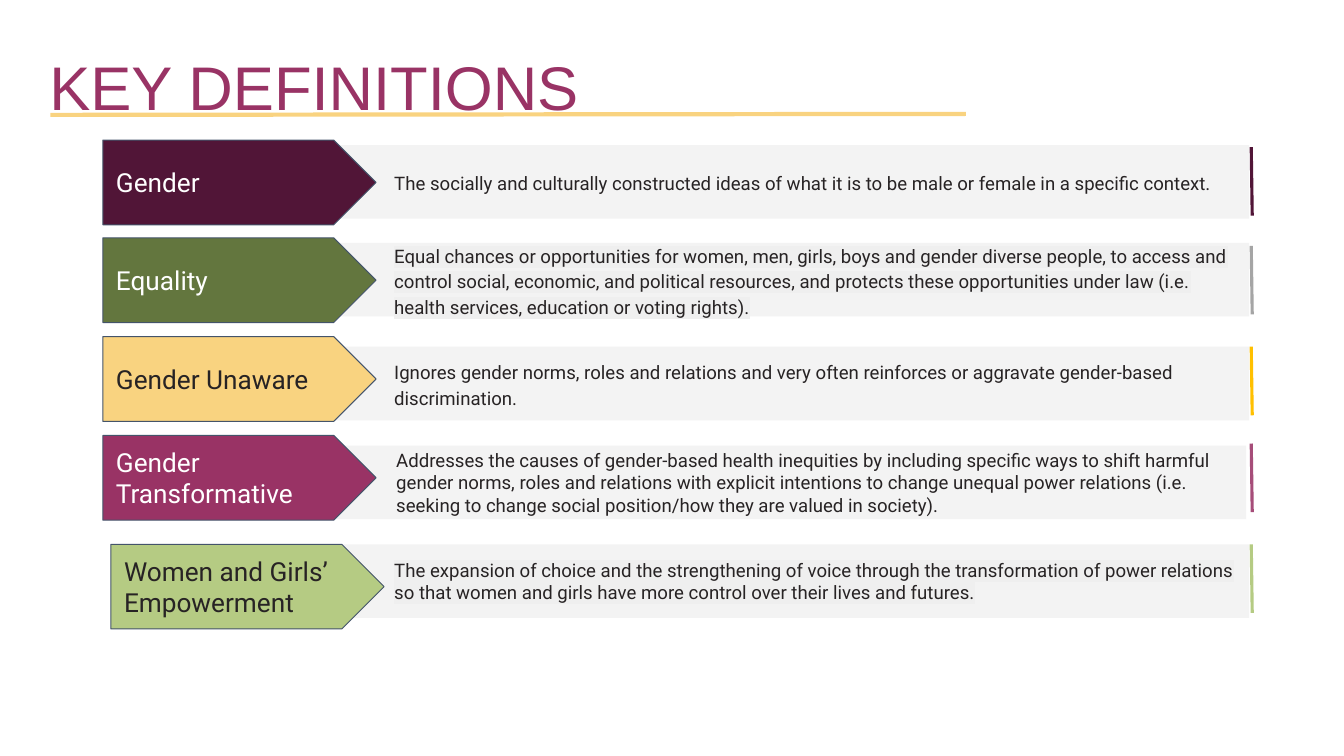
from dataclasses import dataclass

from lxml.etree import SubElement
from pptx import Presentation
from pptx.dml.color import RGBColor
from pptx.enum.shapes import MSO_CONNECTOR, MSO_SHAPE
from pptx.enum.text import MSO_ANCHOR, MSO_AUTO_SIZE, PP_ALIGN
from pptx.oxml.ns import qn
from pptx.shapes.autoshape import Shape
from pptx.slide import Slide
from pptx.text.text import TextFrame
from pptx.util import Emu, Pt

EMU_PER_PX = 9144
INSET = 13
COLORS = {
    "plum": "511537",
    "olive": "63763E",
    "sand": "F9D380",
    "magenta": "993365",
    "lime": "B5CB83",
    "gray": "A5A5A5",
    "amber": "FFC000",
    "rose": "A64D79",
    "outline": "44546A",
    "bar": "F3F3F3",
    "highlight": "EFEFEF",
    "ink": "272324",
    "white": "FFFFFF",
}


@dataclass(frozen=True)
class Definition:
    term: str
    meaning: str
    label_top: int
    bar_top: int
    stripe_top: int
    label_color: str
    stripe_color: str
    term_color: str = "white"
    label_left: int = 102
    bar_left: int = 328
    bar_width: int = 911
    line_spacing: float = 1.0
    highlighted: bool = False


DEFINITIONS = [
    Definition(
        "Gender",
        "The socially and culturally constructed ideas of what it is to be male or female "
        "in a specific context.",
        139, 144, 146, "plum", "plum", line_spacing=1.14,
    ),
    Definition(
        "Equality",
        "Equal chances or opportunities for women, men, girls, boys and gender diverse people, "
        "to access and control social, economic, and political resources, and protects these "
        "opportunities under law (i.e. health services, education or voting rights).",
        236, 241, 244, "olive", "gray", line_spacing=1.14, highlighted=True,
    ),
    Definition(
        "Gender Unaware",
        "Ignores gender norms, roles and relations and very often reinforces or aggravate "
        "gender-based discrimination.",
        334, 344, 344, "sand", "amber", term_color="ink", line_spacing=1.14,
    ),
    Definition(
        "Gender Transformative",
        "Addresses the causes of gender-based health inequities by including specific ways to "
        "shift harmful gender norms, roles and relations with explicit intentions to change "
        "unequal power relations (i.e. seeking to change social position/how they are valued "
        "in society).",
        432, 442, 440, "magenta", "rose", bar_left=330, bar_width=906,
    ),
    Definition(
        "Women and Girls’ Empowerment",
        "The expansion of choice and the strengthening of voice through the transformation of "
        "power relations so that women and girls have more control over their lives and futures.",
        540, 540, 540, "lime", "lime", term_color="ink", label_left=110, highlighted=True,
    ),
]


def px(length: int) -> Emu:
    return Emu(length * EMU_PER_PX)


def rgb(name: str) -> RGBColor:
    return RGBColor.from_string(COLORS[name])


def write_text(text_frame: TextFrame, text: str, size: float, font_name: str, color: str,
               anchor: MSO_ANCHOR = MSO_ANCHOR.MIDDLE, top_inset: int = INSET) -> None:
    text_frame.text = text
    text_frame.word_wrap = True
    text_frame.auto_size = MSO_AUTO_SIZE.NONE
    text_frame.vertical_anchor = anchor
    text_frame.margin_left = text_frame.margin_right = text_frame.margin_bottom = px(INSET)
    text_frame.margin_top = px(top_inset)
    paragraph = text_frame.paragraphs[0]
    paragraph.alignment = PP_ALIGN.LEFT
    font = paragraph.runs[0].font
    font.size = Pt(size)
    font.name = font_name
    font.color.rgb = rgb(color)


def add_block(slide: Slide, kind: MSO_SHAPE, left: int, top: int, width: int, height: int,
              fill: str) -> Shape:
    shape = slide.shapes.add_shape(kind, px(left), px(top), px(width), px(height))
    shape.shadow.inherit = False
    shape.fill.solid()
    shape.fill.fore_color.rgb = rgb(fill)
    shape.line.fill.background()
    return shape


def add_line(slide: Slide, start: tuple[int, int], end: tuple[int, int], color: str,
             weight: float) -> None:
    connector = slide.shapes.add_connector(
        MSO_CONNECTOR.STRAIGHT, *map(px, start), *map(px, end))
    connector.line.color.rgb = rgb(color)
    connector.line.width = Pt(weight)
    SubElement(connector._element.spPr, qn("a:effectLst"))


def highlight_text(text_frame: TextFrame) -> None:
    properties = text_frame.paragraphs[0].runs[0]._r.get_or_add_rPr()
    highlight = properties.makeelement(qn("a:highlight"), {})
    SubElement(highlight, qn("a:srgbClr"), val=COLORS["highlight"])
    properties.find(qn("a:solidFill")).addnext(highlight)


def add_title(slide: Slide) -> None:
    title = slide.shapes.title
    title.left, title.top, title.width, title.height = map(px, (36, 29, 1206, 84))
    write_text(title.text_frame, "KEY DEFINITIONS", 44, "Arial", "magenta",
               MSO_ANCHOR.TOP, top_inset=19)
    add_line(slide, (50, 114), (958, 113), "sand", 3)


def add_definition(slide: Slide, definition: Definition) -> None:
    bar = add_block(slide, MSO_SHAPE.RECTANGLE, definition.bar_left, definition.bar_top,
                    definition.bar_width, 73, COLORS and "bar")
    write_text(bar.text_frame, definition.meaning, 13.3, "Roboto", "ink")
    paragraph = bar.text_frame.paragraphs[0]
    paragraph.line_spacing = definition.line_spacing
    paragraph.space_before = paragraph.space_after = Pt(16)
    properties = paragraph._p.get_or_add_pPr()
    properties.set("marL", str(px(50)))
    properties.set("indent", "0")
    if definition.highlighted:
        highlight_text(bar.text_frame)

    label = add_block(slide, MSO_SHAPE.PENTAGON, definition.label_left, definition.label_top,
                      271, 84, definition.label_color)
    label.line.color.rgb = rgb("outline")
    label.line.width = Pt(0.75)
    write_text(label.text_frame, definition.term, 18.7, "Roboto", definition.term_color)

    add_line(slide, (1241, definition.stripe_top), (1242, definition.stripe_top + 68),
             definition.stripe_color, 2.25)


def main() -> None:
    presentation = Presentation()
    presentation.slide_width = px(1333)
    presentation.slide_height = px(750)
    slide = presentation.slides.add_slide(presentation.slide_layouts[5])
    add_title(slide)
    for definition in DEFINITIONS:
        add_definition(slide, definition)
    presentation.save("out.pptx")


if __name__ == "__main__":
    main()
